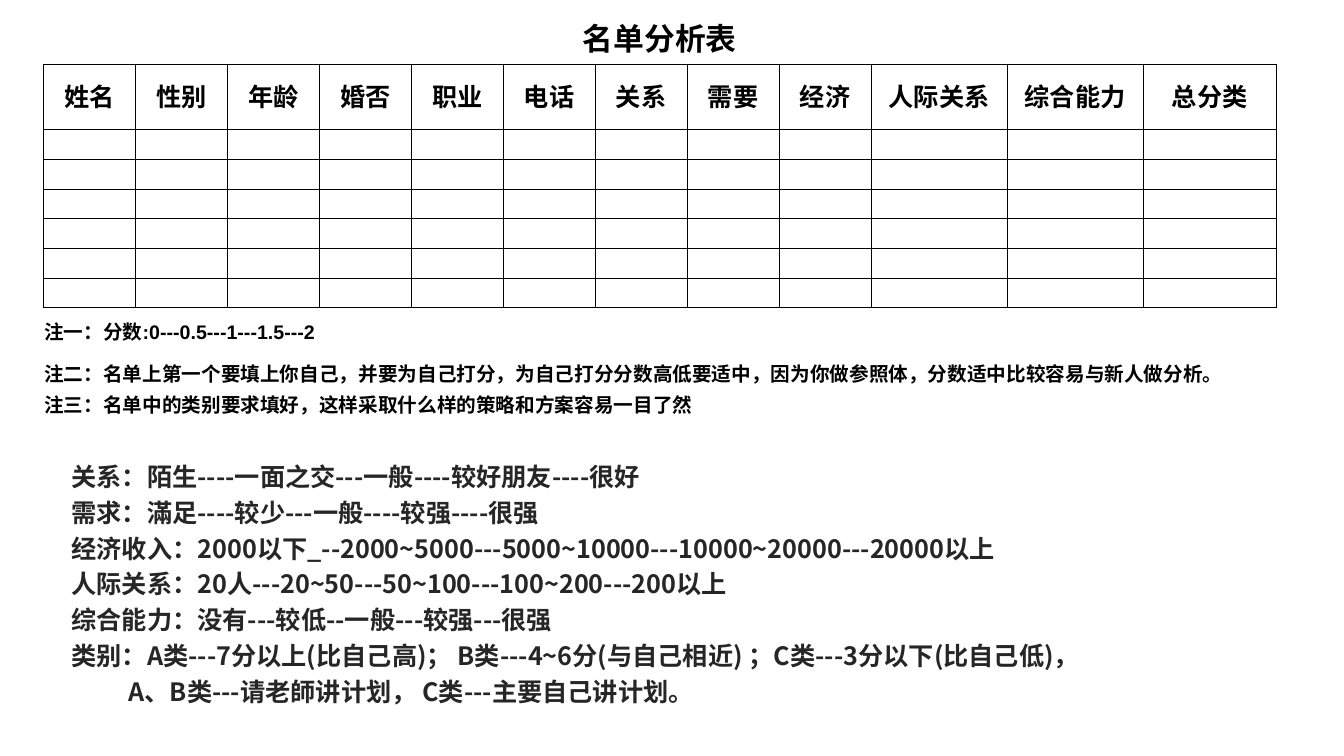
"""Build the name-list analysis slide: a scoring table with a list of rating scales."""
from dataclasses import dataclass

from lxml.etree import SubElement
from pptx import Presentation
from pptx.dml.color import RGBColor
from pptx.enum.text import MSO_ANCHOR, MSO_AUTO_SIZE, PP_ALIGN
from pptx.oxml.ns import qn
from pptx.util import Pt


@dataclass(frozen=True)
class Theme:
    latin: str = "Arial"
    asian: str = "Noto Sans CJK SC"
    ink: str = "000000"
    scale_ink: str = "262626"
    title_size: float = 22
    heading_size: float = 18
    note_size: float = 14
    entry_size: float = 12
    rule_width: float = 0.5


@dataclass(frozen=True)
class TableRow:
    texts: tuple[str, ...]
    height: float
    size: float
    edges: str = ""
    align: PP_ALIGN = PP_ALIGN.LEFT


@dataclass(frozen=True)
class Scale:
    text: str
    indent: float = 0


THEME = Theme()
COLUMN_WIDTHS = [65.7] * 9 + [97.2] * 2 + [95]
HEADINGS = ("姓名", "性别", "年龄", "婚否", "职业", "电话", "关系", "需要", "经济",
            "人际关系", "综合能力", "总分类")
ENTRY_ROW = TableRow(("",) * len(HEADINGS), 21.2, THEME.entry_size, "LRTB")
ROWS = [
    TableRow(("名单分析表",), 36.7, THEME.title_size, "B", PP_ALIGN.CENTER),
    TableRow(HEADINGS, 46.6, THEME.heading_size, "LRTB", PP_ALIGN.CENTER),
    *[ENTRY_ROW] * 6,
    TableRow(("注一：分数:0---0.5---1---1.5---2",), 36, THEME.note_size, "T"),
    TableRow(("注二：名单上第一个要填上你自己，并要为自己打分，为自己打分分数高低要适中，"
              "因为你做参照体，分数适中比较容易与新人做分析。",), 21.6, THEME.note_size),
    TableRow(("注三：名单中的类别要求填好，这样采取什么样的策略和方案容易一目了然",),
             25.2, THEME.note_size),
]
SCALES = [
    Scale("关系：陌生----一面之交---一般----较好朋友----很好"),
    Scale("需求：滿足----较少---一般----较强----很强"),
    Scale("经济收入：2000以下_--2000~5000---5000~10000---10000~20000---20000以上"),
    Scale("人际关系：20人---20~50---50~100---100~200---200以上"),
    Scale("综合能力：没有---较低--一般---较强---很强"),
    Scale("类别：A类---7分以上(比自己高)； B类---4~6分(与自己相近) ；C类---3分以下(比自己低)，"),
    Scale("A、B类---请老師讲计划， C类---主要自己讲计划。", indent=40.7),
]


def write_text(para, text: str, *, size: float, font: str, color: str,
               align: PP_ALIGN = PP_ALIGN.LEFT) -> None:
    """Write one bold span, or set the height of a paragraph without text."""
    para.alignment = align
    if not text:
        SubElement(para._p, qn("a:endParaRPr"), sz=str(int(size * 100)))
        return
    span = para.add_run()
    span.text = text
    span.font.size = Pt(size)
    span.font.bold = True
    span.font.name = font
    span.font.color.rgb = RGBColor.from_string(color)
    SubElement(span._r.get_or_add_rPr(), qn("a:ea"), typeface=THEME.asian)


def draw_borders(cell, edges: str) -> None:
    """Rule the named edges of a cell and clear the others."""
    properties = cell._tc.get_or_add_tcPr()
    for edge in "LRTB":
        line = SubElement(properties, qn(f"a:ln{edge}"), w=str(Pt(THEME.rule_width)))
        if edge in edges:
            fill = SubElement(line, qn("a:solidFill"))
            SubElement(fill, qn("a:srgbClr"), val=THEME.ink)
        else:
            SubElement(line, qn("a:noFill"))


def draw_table(page) -> None:
    """Draw the title, headings, empty entries and notes as one table."""
    table = page.shapes.add_table(
        len(ROWS), len(COLUMN_WIDTHS), Pt(31), Pt(9.4), Pt(sum(COLUMN_WIDTHS)),
        Pt(sum(row.height for row in ROWS))).table
    table.first_row = table.horz_banding = False
    for column, width in zip(table.columns, COLUMN_WIDTHS):
        column.width = Pt(width)
    for index, row in enumerate(ROWS):
        table.rows[index].height = Pt(row.height)
        cells = list(table.rows[index].cells)
        for cell in cells:
            cell.margin_left = cell.margin_right = cell.margin_top = Pt(0.7)
            cell.margin_bottom = Pt(3.6)
            cell.vertical_anchor = MSO_ANCHOR.MIDDLE
            draw_borders(cell, row.edges)
            cell.fill.background()
        if len(row.texts) == 1:
            cells[0].merge(cells[-1])
        for cell, text in zip(cells, row.texts):
            write_text(cell.text_frame.paragraphs[0], text, size=row.size,
                       font=THEME.latin, color=THEME.ink, align=row.align)


def draw_scales(box) -> None:
    """Fill the body placeholder with the rating scales."""
    box.left, box.top, box.width, box.height = Pt(43.9), Pt(321.8), Pt(889.9), Pt(187.9)
    frame = box.text_frame
    frame.word_wrap = True
    frame.auto_size = MSO_AUTO_SIZE.SHAPE_TO_FIT_TEXT
    frame.vertical_anchor = MSO_ANCHOR.TOP
    for index, scale in enumerate(SCALES):
        para = frame.add_paragraph() if index else frame.paragraphs[0]
        para.line_spacing = Pt(25.6)
        para.space_before = para.space_after = Pt(0)
        properties = para._p.get_or_add_pPr()
        properties.set("marL", str(Pt(scale.indent)))
        properties.set("indent", "0")
        SubElement(properties, qn("a:buNone"))
        write_text(para, scale.text, size=THEME.heading_size, font=THEME.asian,
                   color=THEME.scale_ink)


def main() -> None:
    """Create the deck and save it."""
    deck = Presentation()
    deck.slide_width, deck.slide_height = Pt(960), Pt(540)
    page = deck.slides.add_slide(deck.slide_layouts[1])
    title = page.shapes.title
    title._element.getparent().remove(title._element)
    draw_scales(page.placeholders[1])
    draw_table(page)
    deck.save("out.pptx")


if __name__ == "__main__":
    main()
